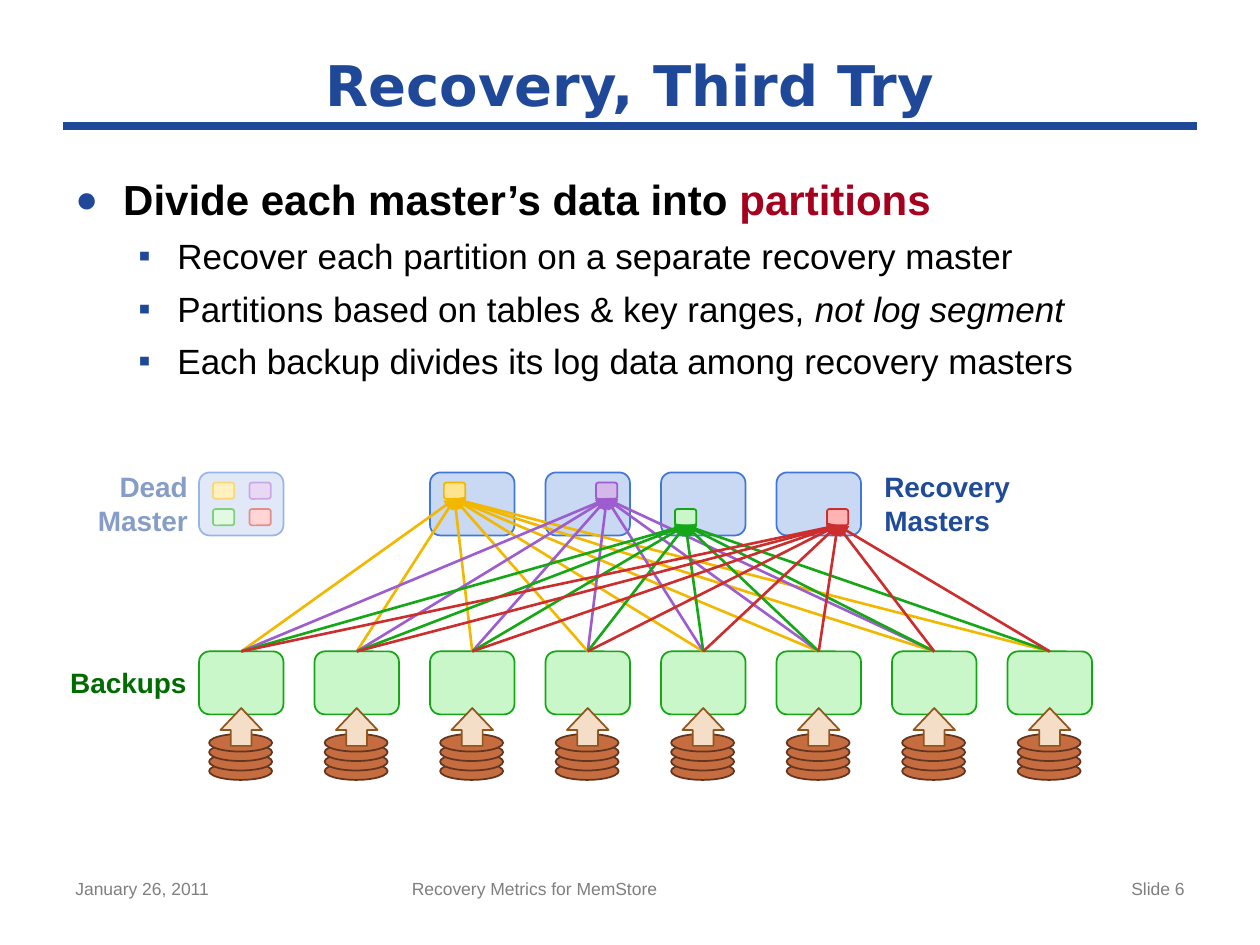
from dataclasses import dataclass

from lxml import etree
from pptx import Presentation
from pptx.dml.color import RGBColor
from pptx.enum.shapes import MSO_CONNECTOR, MSO_SHAPE
from pptx.enum.text import MSO_ANCHOR, PP_ALIGN
from pptx.oxml.ns import qn
from pptx.util import Inches, Pt

LEFT, CENTER, RIGHT = PP_ALIGN.LEFT, PP_ALIGN.CENTER, PP_ALIGN.RIGHT
MIDDLE = MSO_ANCHOR.MIDDLE
STRAIGHT = MSO_CONNECTOR.STRAIGHT
RECT, ROUND = MSO_SHAPE.RECTANGLE, MSO_SHAPE.ROUNDED_RECTANGLE
OVAL, ARROW = MSO_SHAPE.OVAL, MSO_SHAPE.UP_ARROW
TOP, BOTTOM = 0, 2


@dataclass(frozen=True)
class Theme:
    head: str = "DejaVu Sans"
    body: str = "Arial"
    # type sizes
    title: int = 32
    main: int = 24
    sub: int = 20
    label: int = 16
    small: int = 10
    # text colours
    navy: str = "1F4899"
    blue: str = "204B98"
    dark: str = "006C00"
    black: str = "000000"
    accent: str = "A5001E"
    gray: str = "7F7F7F"
    white: str = "FFFFFF"
    # fill and line pairs
    master: tuple = ("C9D8F3", "4177D7")
    backup: tuple = ("C9F7C9", "15A715")
    disk: tuple = ("C56D41", "64351E")
    flow: tuple = ("F4DEC8", "90561C")
    gold: tuple = ("FFE48F", "F2B800")
    violet: tuple = ("D5B8EA", "9E5DCF")
    green: tuple = ("C9F7C9", "15A715")
    red: tuple = ("FFB3B3", "CC2E2E")


def rgb(code):
    return RGBColor.from_string(code)


class Board:
    def __init__(self, slide, theme):
        self.slide, self.theme = slide, theme

    def font(self, para, size, color, bold=False, face=None):
        font = para.font
        font.name, font.size, font.bold = face or self.theme.body, Pt(size), bold
        font.color.rgb = rgb(color)

    def title(self, text, x, y, w, h):
        box = self.slide.shapes.title
        box.left, box.top, box.width, box.height = map(Inches, (x, y, w, h))
        frame = box.text_frame
        frame.text, frame.vertical_anchor = text, MIDDLE
        para = frame.paragraphs[0]
        para.alignment = CENTER
        self.font(para, self.theme.title, self.theme.navy, True, self.theme.head)

    def frame(self, x, y, w, h, wrap=True):
        box = self.slide.shapes.add_textbox(*map(Inches, (x, y, w, h)))
        box.text_frame.word_wrap = wrap
        return box.text_frame

    def text(self, text, x, y, w, h, size, color, bold=False, align=LEFT, wrap=True):
        para = self.frame(x, y, w, h, wrap).paragraphs[0]
        para.text, para.alignment = text, align
        self.font(para, size, color, bold)

    def bullet(self, para, mark, margin, hang, space, scale=100):
        para.space_before = Pt(space)
        props = para._p.get_or_add_pPr()
        props.set("marL", str(Inches(margin)))
        props.set("indent", str(-Inches(hang)))
        color = etree.SubElement(props, qn("a:buClr"))
        etree.SubElement(color, qn("a:srgbClr"), val=self.theme.navy)
        etree.SubElement(props, qn("a:buSzPct"), val=str(scale * 1000))
        etree.SubElement(props, qn("a:buFont"), typeface=self.theme.body)
        etree.SubElement(props, qn("a:buChar"), char=mark)

    def shape(self, kind, x, y, w, h, pair):
        item = self.slide.shapes.add_shape(kind, *map(Inches, (x, y, w, h)))
        fill, line = pair
        item.shadow.inherit = False
        item.fill.solid()
        item.fill.fore_color.rgb = rgb(fill)
        if line:
            item.line.color.rgb, item.line.width = rgb(line), Pt(1)
        else:
            item.line.fill.background()
        return item

    def veil(self, x, y, w, h, alpha):
        item = self.shape(RECT, x, y, w, h, (self.theme.white, None))
        color = item._element.spPr.find(".//" + qn("a:srgbClr"))
        etree.SubElement(color, qn("a:alpha"), val=str(alpha * 1000))

    def line(self, x1, y1, x2, y2, color, width):
        item = self.slide.shapes.add_connector(STRAIGHT, *map(Inches, (x1, y1, x2, y2)))
        item.line.color.rgb, item.line.width = rgb(color), Pt(width)
        etree.SubElement(item._element.spPr, qn("a:effectLst"))
        return item

    def link(self, start, end, color):
        item = self.line(0, 0, 1, 1, color, 1.5)
        item.begin_connect(start, TOP)
        item.end_connect(end, BOTTOM)
        etree.SubElement(item.line._get_or_add_ln(), qn("a:tailEnd"), type="triangle")


def main():
    theme = Theme()
    deck = Presentation()
    deck.slide_width, deck.slide_height = Inches(10), Inches(7.5)
    board = Board(deck.slides.add_slide(deck.slide_layouts[5]), theme)

    # Heading and rule
    board.line(0.5, 1, 9.5, 1, theme.navy, 4.5)
    board.title("Recovery, Third Try", 0.5, 0.33, 9, 0.67)

    # Bullets
    frame = board.frame(0.5, 1.33, 9, 1.5)
    para = frame.paragraphs[0]
    board.bullet(para, "●", 0.38, 0.38, 12, 90)
    board.font(para, theme.main, theme.black, True)
    para.add_run().text = "Divide each master’s data into "
    run = para.add_run()
    run.text, run.font.color.rgb = "partitions", rgb(theme.accent)
    points = [
        ("Recover each partition on a separate recovery master", ""),
        ("Partitions based on tables & key ranges, ", "not log segment"),
        ("Each backup divides its log data among recovery masters", ""),
    ]
    for plain, slant in points:
        para = frame.add_paragraph()
        para.level = 1
        board.bullet(para, "▪", 0.81, 0.31, 6)
        board.font(para, theme.sub, theme.black)
        para.add_run().text = plain
        if slant:
            run = para.add_run()
            run.text, run.font.italic = slant, True

    # Footer
    for text, x, w, align in [
        ("January 26, 2011", 0.5, 2.33, LEFT),
        ("Recovery Metrics for MemStore", 3.17, 3.75, LEFT),
        ("Slide 6", 7.17, 2.33, RIGHT),
    ]:
        board.text(text, x, 6.92, w, 0.43, theme.small, theme.gray, align=align)

    # Backups, each with a stack of disks
    cols = [1.58 + 11 / 12 * i for i in range(8)]
    backups = []
    for x in cols:
        for i in range(4):
            board.shape(OVAL, x + 0.08, 6.05 - 0.075 * i, 0.5, 0.14, theme.disk)
        backups.append(board.shape(ROUND, x, 5.17, 0.67, 0.5, theme.backup))
        arrow = board.shape(ARROW, x + 0.17, 5.62, 0.33, 0.3, theme.flow)
        arrow.adjustments[1] = 0.58

    # Dead master holds every partition, each recovery master one
    parts = [
        (theme.gold, 0.11, 0.08, 8),
        (theme.violet, 0.4, 0.08, 7),
        (theme.green, 0.11, 0.29, 8),
        (theme.red, 0.4, 0.29, 8),
    ]

    def master(x, held):
        board.shape(ROUND, x, 3.75, 0.67, 0.5, theme.master)
        return [board.shape(ROUND, x + dx, 3.75 + dy, 0.17, 0.13, pair)
                for pair, dx, dy, _ in held]

    master(cols[0], parts)
    goals = [master(x, [part])[0] for x, part in zip(cols[2:], parts)]

    # Log data from backups to partitions
    for goal, (pair, _, _, count) in zip(goals, parts):
        for backup in backups[:count]:
            board.link(backup, goal, pair[1])

    # Labels, with the dead master faded
    for text, x, y, w, h, color, align in [
        ("Recovery\nMasters", 6.92, 3.68, 1.21, 0.64, theme.blue, LEFT),
        ("Backups", 0.45, 5.23, 1.13, 0.37, theme.dark, RIGHT),
        ("Dead\nMaster", 0.66, 3.68, 0.93, 0.64, theme.blue, RIGHT),
    ]:
        board.text(text, x, y, w, h, theme.label, color, True, align, wrap=False)
    board.veil(0.66, 3.58, 1.76, 0.83, 46)

    deck.save("out.pptx")


if __name__ == "__main__":
    main()
